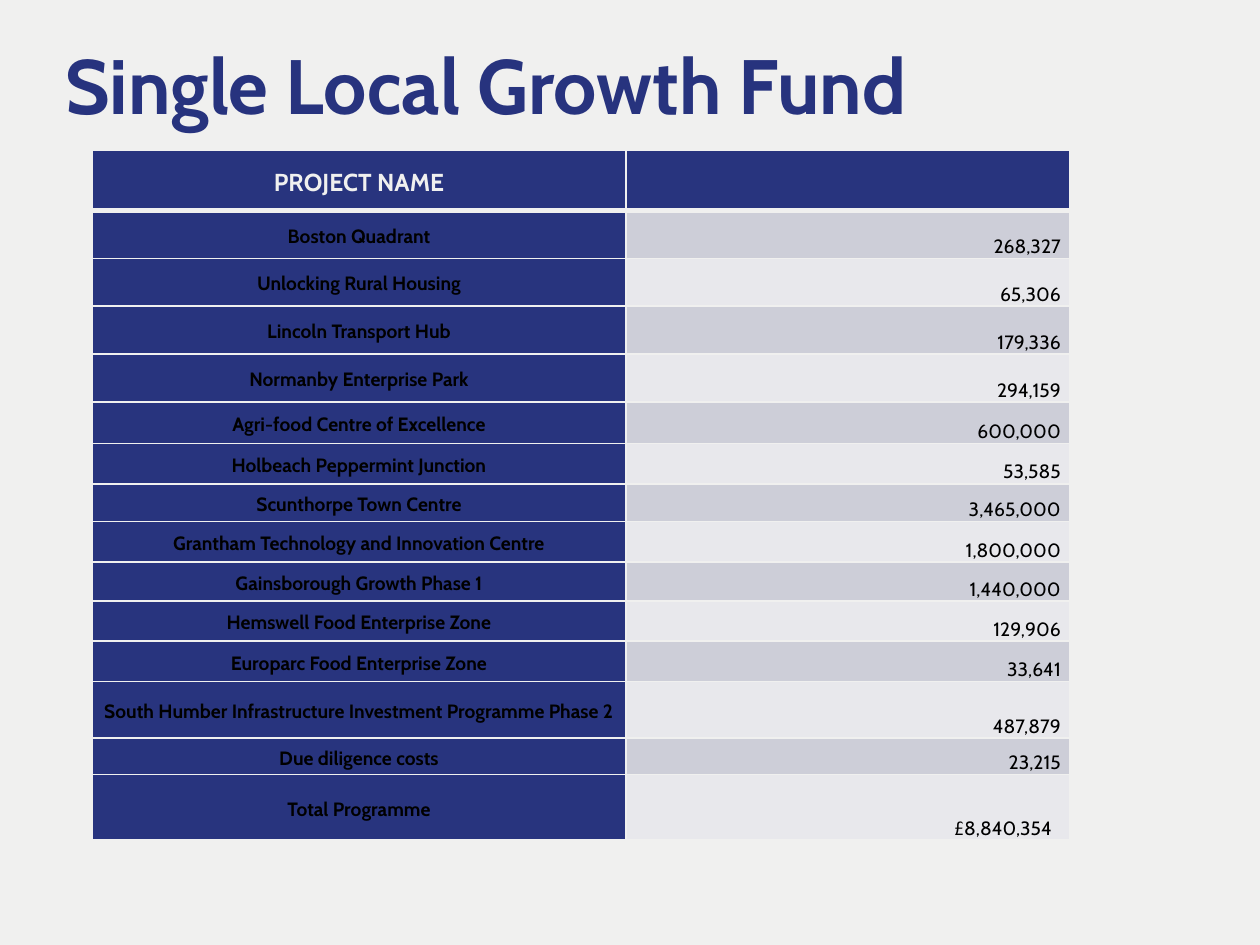
"""Build the Single Local Growth Fund slide with its table of project costs."""
from lxml import etree
from pptx import Presentation
from pptx.dml.color import RGBColor
from pptx.enum.text import MSO_ANCHOR, PP_ALIGN
from pptx.oxml.ns import qn
from pptx.util import Inches, Pt

TOP, MIDDLE, BOTTOM = MSO_ANCHOR.TOP, MSO_ANCHOR.MIDDLE, MSO_ANCHOR.BOTTOM
LEFT, CENTER, RIGHT = PP_ALIGN.LEFT, PP_ALIGN.CENTER, PP_ALIGN.RIGHT
PAPER = RGBColor(0xF0, 0xF0, 0xEF)
TITLE_BLUE = RGBColor(0x27, 0x33, 0x7E)
CELL_BLUE = RGBColor(0x28, 0x34, 0x7E)
DARK_BAND = RGBColor(0xCD, 0xCE, 0xD8)
LIGHT_BAND = RGBColor(0xE8, 0xE8, 0xEC)
BLACK = RGBColor(0, 0, 0)

COLUMN_WIDTHS = (4.24, 3.52)
HEADER_HEIGHT = 0.48
PROJECTS = (
    ("Boston Quadrant", "268,327", 0.38),
    ("Unlocking Rural Housing", "65,306", 0.38),
    ("Lincoln Transport Hub", "179,336", 0.38),
    ("Normanby Enterprise Park", "294,159", 0.38),
    ("Agri-food Centre of Excellence", "600,000", 0.33),
    ("Holbeach Peppermint Junction", "53,585", 0.32),
    ("Scunthorpe Town Centre", "3,465,000", 0.3),
    ("Grantham Technology and Innovation Centre", "1,800,000", 0.32),
    ("Gainsborough Growth Phase 1", "1,440,000", 0.31),
    ("Hemswell Food Enterprise Zone", "129,906", 0.32),
    ("Europarc Food Enterprise Zone", "33,641", 0.32),
    ("South Humber Infrastructure Investment Programme Phase 2", "487,879", 0.45),
    ("Due diligence costs", "23,215", 0.29),
    ("Total Programme", "£8,840,354", 0.52),
)


class SlideBuilder:
    """Holds the font, the border colour and the current slide."""

    def __init__(self, page, font_name="Cabin", border_color=PAPER):
        self.page = page
        self.font_name = font_name
        self.border_color = border_color

    def background(self, color):
        """Fill the slide background."""
        fill = self.page.background.fill
        fill.solid()
        fill.fore_color.rgb = color

    def set_text(self, para, text, size, color, bold, align, spacing):
        """Put formatted text in a paragraph."""
        para.text = text
        para.alignment = align
        para.line_spacing = spacing
        for span in para.runs:
            span.font.name = self.font_name
            span.font.size = Pt(size)
            span.font.bold = bold
            span.font.color.rgb = color

    def title(self, text, left, top, width, height):
        """Add the slide title."""
        box = self.page.shapes.add_textbox(
            Inches(left), Inches(top), Inches(width), Inches(height))
        frame = box.text_frame
        frame.word_wrap = True
        frame.vertical_anchor = TOP
        self.set_text(frame.paragraphs[0], text, 44, TITLE_BLUE, True, LEFT, 0.9)

    def table(self, left, top, widths, heights):
        """Add an empty table and return it."""
        frame = self.page.shapes.add_table(
            len(heights), len(widths), Inches(left), Inches(top),
            Inches(sum(widths)), Inches(sum(heights)))
        for column, width in zip(frame.table.columns, widths):
            column.width = Inches(width)
        for row, height in zip(frame.table.rows, heights):
            row.height = Inches(height)
        return frame.table

    def borders(self, cell, top=1, bottom=1):
        """Draw the four borders of a cell, with widths in points."""
        properties = cell._tc.get_or_add_tcPr()
        for side, width in (("L", 1), ("R", 1), ("T", top), ("B", bottom)):
            line = etree.SubElement(properties, qn(f"a:ln{side}"), w=str(Pt(width)))
            fill = etree.SubElement(line, qn("a:solidFill"))
            etree.SubElement(fill, qn("a:srgbClr"), val=str(self.border_color))

    def cell(self, cell, text, fill, size=11, color=BLACK, bold=True,
             align=CENTER, anchor=MIDDLE):
        """Fill a table cell and set its text."""
        cell.fill.solid()
        cell.fill.fore_color.rgb = fill
        cell.vertical_anchor = anchor
        cell.margin_left = cell.margin_right = Inches(0.07)
        cell.margin_top = cell.margin_bottom = 0
        self.set_text(cell.text_frame.paragraphs[0], text, size, color, bold, align, 1.15)


def main():
    """Build and save the deck."""
    deck = Presentation()
    deck.slide_width, deck.slide_height = Inches(10), Inches(7.5)
    builder = SlideBuilder(deck.slides.add_slide(deck.slide_layouts[6]))
    builder.background(PAPER)
    builder.title("Single Local Growth Fund", 0.42, 0.33, 9.18, 1.43)

    heights = [HEADER_HEIGHT] + [height for _, _, height in PROJECTS]
    table = builder.table(0.73, 1.19, COLUMN_WIDTHS, heights)
    for column, heading in enumerate(("PROJECT NAME", "")):
        header = table.cell(0, column)
        builder.borders(header, bottom=3)
        builder.cell(header, heading, CELL_BLUE, size=14, color=PAPER)
    for row, (project, amount, _) in enumerate(PROJECTS, start=1):
        name_cell, amount_cell = table.cell(row, 0), table.cell(row, 1)
        for cell in (name_cell, amount_cell):
            builder.borders(cell, top=3 if row == 1 else 1)
        builder.cell(name_cell, project, CELL_BLUE)
        builder.cell(amount_cell, amount, DARK_BAND if row % 2 else LIGHT_BAND,
                     bold=False, align=RIGHT, anchor=BOTTOM)
    table.cell(len(PROJECTS), 1).margin_right = Inches(0.14)
    deck.save("out.pptx")


if __name__ == "__main__":
    main()
